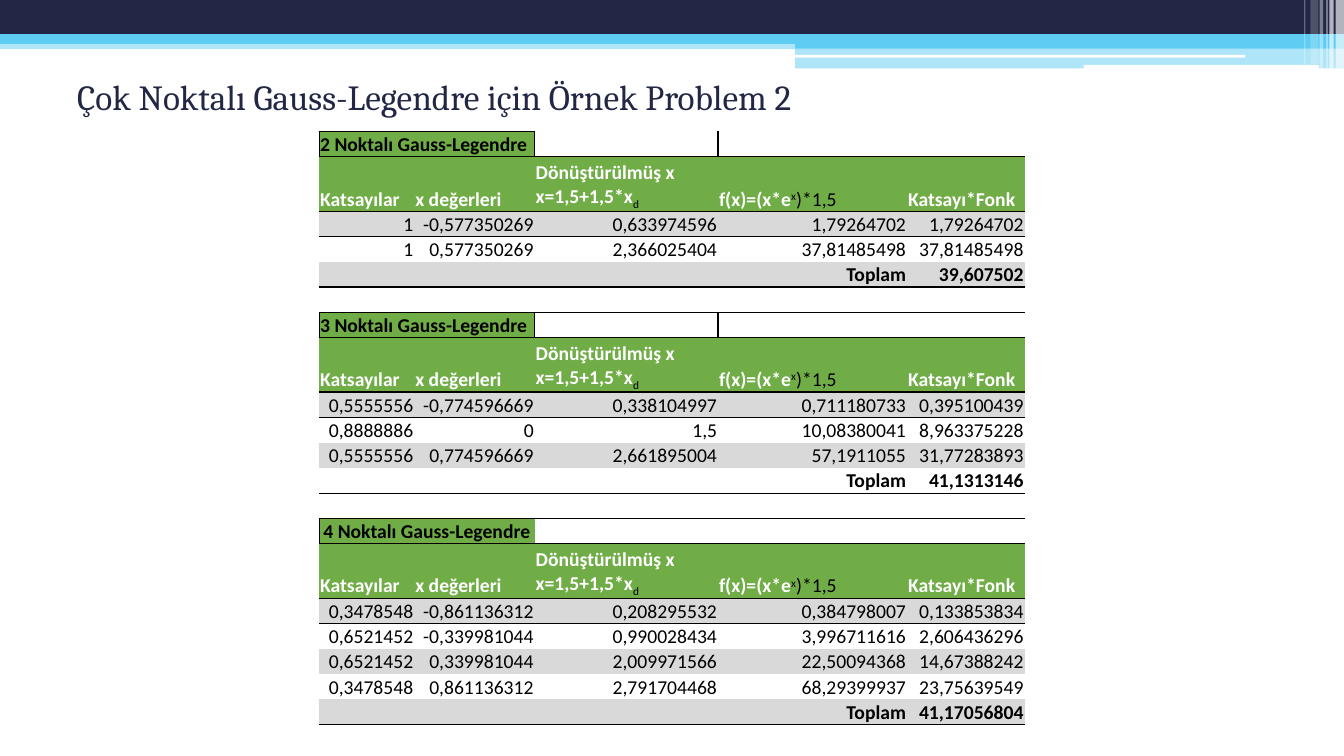
from lxml.etree import SubElement
from pptx import Presentation
from pptx.dml.color import RGBColor
from pptx.enum.shapes import MSO_SHAPE as Shape
from pptx.enum.text import MSO_ANCHOR as Anchor, PP_ALIGN as Align
from pptx.oxml import parse_xml
from pptx.oxml.ns import nsdecls, qn
from pptx.util import Pt

COLORS = {"navy": "212745", "sky": "5ECCF3", "white": "FFFFFF",
          "black": "000000", "green": "70AD47", "gray": "D9D9D9"}
NO_STYLE = "{2D5ABB26-0587-4C30-8999-92F81FD0307C}"
SLIDE_WIDTH, SLIDE_HEIGHT = 960, 540
TEXT_SIZE = 14
ROW_HEIGHT, HEADER_HEIGHT = 18.08, 38.9
COLUMN_WIDTHS = [68, 86, 131, 135, 84]

BANDS = [
    (Shape.RECTANGLE, 0, 28.6, 960, 6.6, "sky", 50),
    (Shape.RECTANGLE, 0, 0, 960, 24.4, "navy", 100),
    (Shape.RECTANGLE, 0, 24.4, 960, 7, "sky", 100),
    (Shape.RECTANGLE, 568, 28, 392, 6.6, "sky", 100),
    (Shape.RECTANGLE, 568, 34.6, 392, 14.2, "sky", 50),
    (Shape.ROUNDED_RECTANGLE, 567.5, 39.2, 322, 2, "white", 100),
    (Shape.ROUNDED_RECTANGLE, 774, 46.4, 168, 2.8, "white", 100),
]
STRIPES = [(954, 6, 49, 65), (949.6, 3, 49, 65), (947.5, 0.8, 49, 60),
           (942.6, 2.6, 49, 40), (936, 5.8, 46, 20), (931.6, 0.8, 46, 30)]

HEADERS = [
    [("Katsayılar", "white", True, 0)],
    [("x değerleri", "white", True, 0)],
    [("Dönüştürülmüş x\vx=1,5+1,5*x", "white", True, 0), ("d", "black", False, -25)],
    [("f(x)=(x*e", "white", True, 0), ("x", "black", False, 30),
     (")*1,5", "black", False, 0)],
    [("Katsayı*Fonk", "white", True, 0)],
]
SECTIONS = [
    ("2 Noktalı Gauss-Legendre", Align.LEFT, "LRTB", [
        ["1", "-0,577350269", "0,633974596", "1,79264702", "1,79264702"],
        ["1", "0,577350269", "2,366025404", "37,81485498", "37,81485498"],
    ], "39,607502"),
    ("3 Noktalı Gauss-Legendre", Align.LEFT, "LRTB", [
        ["0,5555556", "-0,774596669", "0,338104997", "0,711180733", "0,395100439"],
        ["0,8888886", "0", "1,5", "10,08380041", "8,963375228"],
        ["0,5555556", "0,774596669", "2,661895004", "57,1911055", "31,77283893"],
    ], "41,1313146"),
    ("4 Noktalı Gauss-Legendre", Align.CENTER, "LB", [
        ["0,3478548", "-0,861136312", "0,208295532", "0,384798007", "0,133853834"],
        ["0,6521452", "-0,339981044", "0,990028434", "3,996711616", "2,606436296"],
        ["0,6521452", "0,339981044", "2,009971566", "22,50094368", "14,67388242"],
        ["0,3478548", "0,861136312", "2,791704468", "68,29399937", "23,75639549"],
    ], "41,17056804"),
]


def rgb(name):
    return RGBColor.from_string(COLORS[name])


def style_font(font, name, size, color, bold=False):
    font.name, font.size, font.bold = name, Pt(size), bold
    font.color.rgb = rgb(color)


def add_bar(page, kind, left, top, width, height, color, opacity):
    bar = page.shapes.add_shape(kind, Pt(left), Pt(top), Pt(width), Pt(height))
    bar.shadow.inherit = False
    bar.line.fill.background()
    bar.fill.solid()
    bar.fill.fore_color.rgb = rgb(color)
    if opacity < 100:
        shade = bar.fill._xPr.find(qn("a:solidFill"))[0]
        SubElement(shade, qn("a:alpha"), val=str(opacity * 1000))


def add_banner(page, left, top):
    for kind, x, y, width, height, color, opacity in BANDS:
        add_bar(page, kind, left + x, top + y, width, height, color, opacity)
    for x, width, height, opacity in STRIPES:
        add_bar(page, Shape.RECTANGLE, left + x, top, width, height, "white", opacity)


def add_title(page, left, top, width, height):
    box = page.shapes.add_textbox(Pt(left), Pt(top), Pt(width), Pt(height))
    frame = box.text_frame
    frame.word_wrap = True
    frame.vertical_anchor = Anchor.MIDDLE
    frame.text = "Çok Noktalı Gauss-Legendre için Örnek Problem 2"
    style_font(frame.paragraphs[0].runs[0].font, "Cambria", 25.2, "navy")


def write_spans(para, spans):
    for text, color, bold, baseline in spans:
        known = len(para.runs)
        for index, line in enumerate(text.split("\v")):
            if index:
                para.add_line_break()
            para.add_run().text = line
        for span in para.runs[known:]:
            style_font(span.font, "Calibri", TEXT_SIZE, color, bold)
            if baseline:
                span.font._element.set("baseline", str(baseline * 1000))
    for line_break in para._p.findall(qn("a:br")):
        SubElement(line_break, qn("a:rPr"), sz=str(TEXT_SIZE * 100))


def fill_cell(cell, spans=(), align=Align.LEFT, fill=None, borders=""):
    cell.margin_left = cell.margin_right = cell.margin_top = Pt(0.7)
    cell.margin_bottom = 0
    cell.vertical_anchor = Anchor.BOTTOM
    para = cell.text_frame.paragraphs[0]
    para.alignment = align
    write_spans(para, spans)
    if not spans:
        SubElement(para._p, qn("a:endParaRPr"), sz=str(TEXT_SIZE * 100))
    if fill:
        cell.fill.solid()
        cell.fill.fore_color.rgb = rgb(fill)
    else:
        cell.fill.background()
    for index, side in enumerate(borders):
        cell._tc.tcPr.insert(index, parse_xml(
            f'<a:ln{side} {nsdecls("a")} w="12700"><a:solidFill>'
            f'<a:srgbClr val="{COLORS["black"]}"/></a:solidFill></a:ln{side}>'))


def fill_section(table, first, section):
    title, align, borders, values, total = section
    title_cell = table.cell(first, 0)
    title_cell.merge(table.cell(first, 1))
    fill_cell(title_cell, [(title, "black", True, 0)], align, "green", borders)
    fill_cell(table.cell(first, 1), fill="green", borders=borders.replace("L", ""))
    for column in range(2, len(COLUMN_WIDTHS)):
        touches_title = column == 2 and "R" in borders
        fill_cell(table.cell(first, column), borders="LB" if touches_title else "B")

    table.rows[first + 1].height = Pt(HEADER_HEIGHT)
    for column, spans in enumerate(HEADERS):
        fill_cell(table.cell(first + 1, column), spans, fill="green", borders="TB")

    body = values + [["", "", "", "Toplam", total]]
    for index, row in enumerate(body):
        is_total = index == len(values)
        edges = "T" if index == 0 else "B" if is_total else ""
        for column, text in enumerate(row):
            spans = [(text, "black", is_total, 0)] if text else []
            fill_cell(table.cell(first + 2 + index, column), spans, Align.RIGHT,
                      None if index % 2 else "gray", edges)
    return first + 2 + len(body)


def add_results_table(page, left, top):
    row_count = sum(len(section[3]) + 4 for section in SECTIONS) - 1
    frame = page.shapes.add_table(row_count, len(COLUMN_WIDTHS), Pt(left), Pt(top),
                                  Pt(sum(COLUMN_WIDTHS)), Pt(ROW_HEIGHT * row_count))
    table = frame.table
    table.first_row = table.horz_banding = False
    table._tbl.tblPr.find(qn("a:tableStyleId")).text = NO_STYLE
    for column, width in zip(table.columns, COLUMN_WIDTHS):
        column.width = Pt(width)
    for row in table.rows:
        row.height = Pt(ROW_HEIGHT)
    first = 0
    for section in SECTIONS:
        if first:
            for column in range(len(COLUMN_WIDTHS)):
                fill_cell(table.cell(first, column), borders="T")
            first += 1
        first = fill_section(table, first, section)


def main():
    deck = Presentation()
    deck.slide_width, deck.slide_height = Pt(SLIDE_WIDTH), Pt(SLIDE_HEIGHT)
    page = deck.slides.add_slide(deck.slide_layouts[6])
    add_banner(page, 0, 0)
    add_title(page, 48, 49, 864, 39.6)
    add_results_table(page, 228, 93.9)
    deck.save("out.pptx")


if __name__ == "__main__":
    main()
